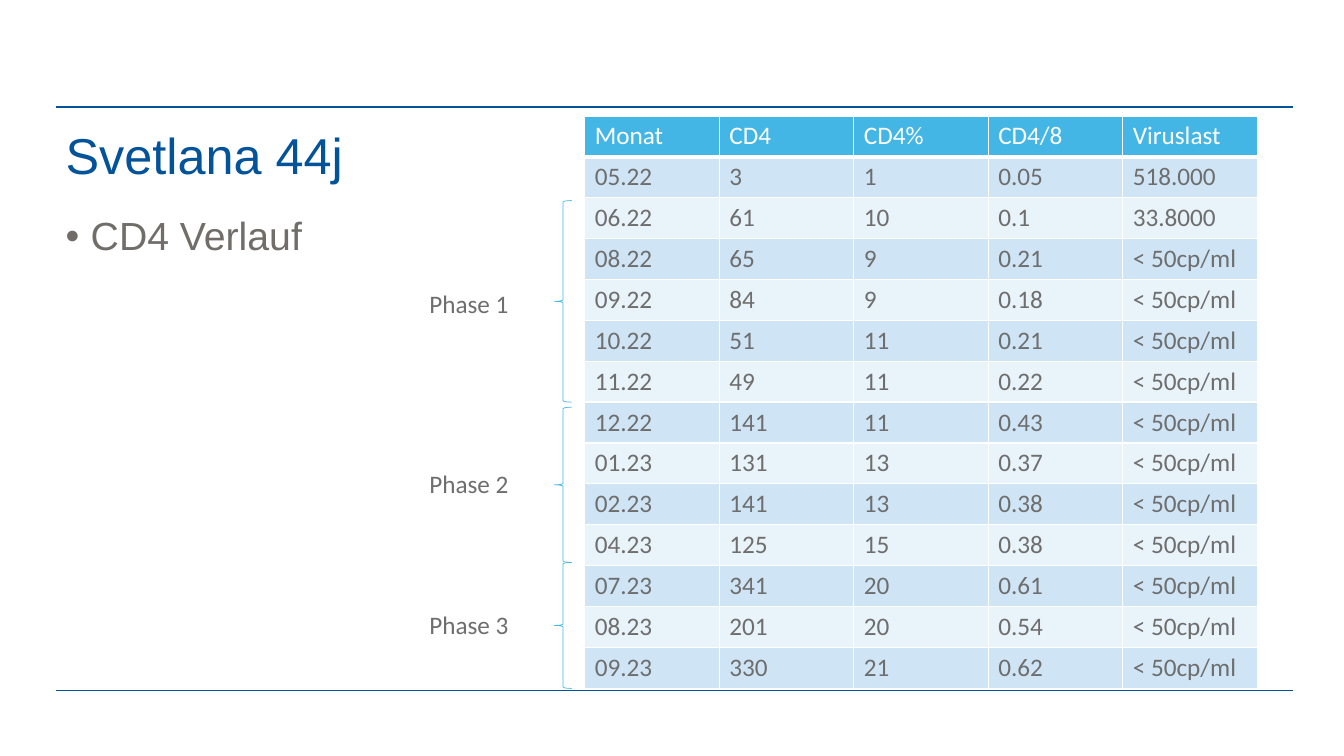
from dataclasses import dataclass

from lxml import etree
from pptx import Presentation
from pptx import util as u
from pptx.dml.color import RGBColor
from pptx.enum import shapes, text
from pptx.oxml import ns

SCALE = 9144


@dataclass(frozen=True)
class Theme:
    """Colours, fonts and type sizes of the slide."""
    navy: str = "03539A"
    sky: str = "44B6E6"
    band_dark: str = "CFE5F5"
    band_light: str = "E9F3FA"
    white: str = "FFFFFF"
    body_grey: str = "716D69"
    table_grey: str = "6E6E6E"
    heading_font: str = "Arial"
    table_font: str = "Calibri"
    title_size: int = 36
    body_size: int = 28
    table_size: int = 18


THEME = Theme()
HEADER = ("Monat", "CD4", "CD4%", "CD4/8", "Viruslast")
SUPPRESSED = "< 50cp/ml"
COURSE = (
    ("05.22", "3", "1", "0.05", "518.000"),
    ("06.22", "61", "10", "0.1", "33.8000"),
    ("08.22", "65", "9", "0.21", SUPPRESSED),
    ("09.22", "84", "9", "0.18", SUPPRESSED),
    ("10.22", "51", "11", "0.21", SUPPRESSED),
    ("11.22", "49", "11", "0.22", SUPPRESSED),
    ("12.22", "141", "11", "0.43", SUPPRESSED),
    ("01.23", "131", "13", "0.37", SUPPRESSED),
    ("02.23", "141", "13", "0.38", SUPPRESSED),
    ("04.23", "125", "15", "0.38", SUPPRESSED),
    ("07.23", "341", "20", "0.61", SUPPRESSED),
    ("08.23", "201", "20", "0.54", SUPPRESSED),
    ("09.23", "330", "21", "0.62", SUPPRESSED),
)
PHASES = (
    ("Phase 1", 199, 200, 281),
    ("Phase 2", 404, 154, 460),
    ("Phase 3", 558, 125, 600),
)


def px(*lengths):
    """Turn px lengths into EMU."""
    return [u.Emu(length * SCALE) for length in lengths]


def add_run(paragraph, words, font, size, colour):
    """Add one formatted run to a paragraph."""
    run = paragraph.add_run()
    run.text = words
    run.font.name = font
    run.font.size = u.Pt(size)
    run.font.color.rgb = RGBColor.from_string(colour)


def place(shape, box):
    """Move a placeholder to its box."""
    shape.left, shape.top, shape.width, shape.height = px(*box)


def add_rule(slide, left, right, y):
    """Draw a horizontal frame line."""
    rule = slide.shapes.add_connector(shapes.MSO_CONNECTOR.STRAIGHT, *px(left, y, right, y))
    rule.line.color.rgb = RGBColor.from_string(THEME.navy)
    rule.line.width = u.Pt(1)
    etree.SubElement(rule._element.spPr, ns.qn("a:effectLst"))


def fill_title(slide, box, words):
    """Place and write the title."""
    title = slide.shapes.title
    place(title, box)
    frame = title.text_frame
    frame.auto_size = text.MSO_AUTO_SIZE.NONE
    frame.vertical_anchor = text.MSO_ANCHOR.MIDDLE
    heading = frame.paragraphs[0]
    heading.alignment = text.PP_ALIGN.LEFT
    heading.line_spacing = 0.9
    add_run(heading, words, THEME.heading_font, THEME.title_size, THEME.navy)


def fill_body(slide, box, words):
    """Place and write the bullet list."""
    body = slide.placeholders[1]
    place(body, box)
    body.text_frame.auto_size = text.MSO_AUTO_SIZE.NONE
    topic = body.text_frame.paragraphs[0]
    props = topic._p.get_or_add_pPr()
    indent = px(25)[0]
    props.set("marL", str(indent))
    props.set("indent", str(-indent))
    etree.SubElement(props, ns.qn("a:buFont")).set("typeface", THEME.heading_font)
    etree.SubElement(props, ns.qn("a:buChar")).set("char", "•")
    topic.line_spacing = 0.9
    topic.space_before = u.Pt(0)
    add_run(topic, words, THEME.heading_font, THEME.body_size, THEME.body_grey)


def add_borders(cell, bottom_width):
    """Give a cell white borders."""
    props = cell._tc.get_or_add_tcPr()
    for side, width in (("L", 1), ("R", 1), ("T", 1), ("B", bottom_width)):
        border = etree.SubElement(props, ns.qn(f"a:ln{side}"), w=str(u.Pt(width)))
        paint = etree.SubElement(border, ns.qn("a:solidFill"))
        etree.SubElement(paint, ns.qn("a:srgbClr"), val=THEME.white)


def add_course_table(slide, box):
    """Build the table of monthly values."""
    rows = (HEADER, *COURSE)
    table = slide.shapes.add_table(len(rows), len(HEADER), *px(*box)).table
    for row_index, values in enumerate(rows):
        is_header = row_index == 0
        band = THEME.band_dark if row_index % 2 else THEME.band_light
        fill = THEME.sky if is_header else band
        colour = THEME.white if is_header else THEME.table_grey
        for column_index, value in enumerate(values):
            cell = table.cell(row_index, column_index)
            add_borders(cell, 3 if is_header else 1)
            cell.fill.solid()
            cell.fill.fore_color.rgb = RGBColor.from_string(fill)
            add_run(cell.text_frame.paragraphs[0], value, THEME.table_font,
                    THEME.table_size, colour)


def add_phase(slide, brace_box, label_box, words):
    """Draw one phase bracket with its label."""
    brace = slide.shapes.add_shape(shapes.MSO_SHAPE.LEFT_BRACE, *px(*brace_box))
    brace.shadow.inherit = False
    brace.fill.background()
    brace.line.color.rgb = RGBColor.from_string(THEME.sky)
    brace.line.width = u.Pt(0.5)
    frame = slide.shapes.add_textbox(*px(*label_box)).text_frame
    frame.word_wrap = False
    frame.auto_size = text.MSO_AUTO_SIZE.SHAPE_TO_FIT_TEXT
    add_run(frame.paragraphs[0], words, THEME.table_font, THEME.table_size, THEME.table_grey)


def build_course_slide(deck):
    """Compose the CD4 course slide."""
    slide = deck.slides.add_slide(deck.slide_layouts[1])
    for y in (106, 685):
        add_rule(slide, 56, 1282, y)
    fill_title(slide, (55, 115, 802, 84), "Svetlana 44j")
    fill_body(slide, (55, 210, 539, 484), "CD4 Verlauf")
    add_course_table(slide, (580, 115, 667, 568))
    for words, top, height, label_top in PHASES:
        add_phase(slide, (550, top, 17, height), (416, label_top, 100, 40), words)


def main():
    """Create and save the deck."""
    deck = Presentation()
    deck.slide_width, deck.slide_height = px(1333, 750)
    build_course_slide(deck)
    deck.save("out.pptx")


if __name__ == "__main__":
    main()
